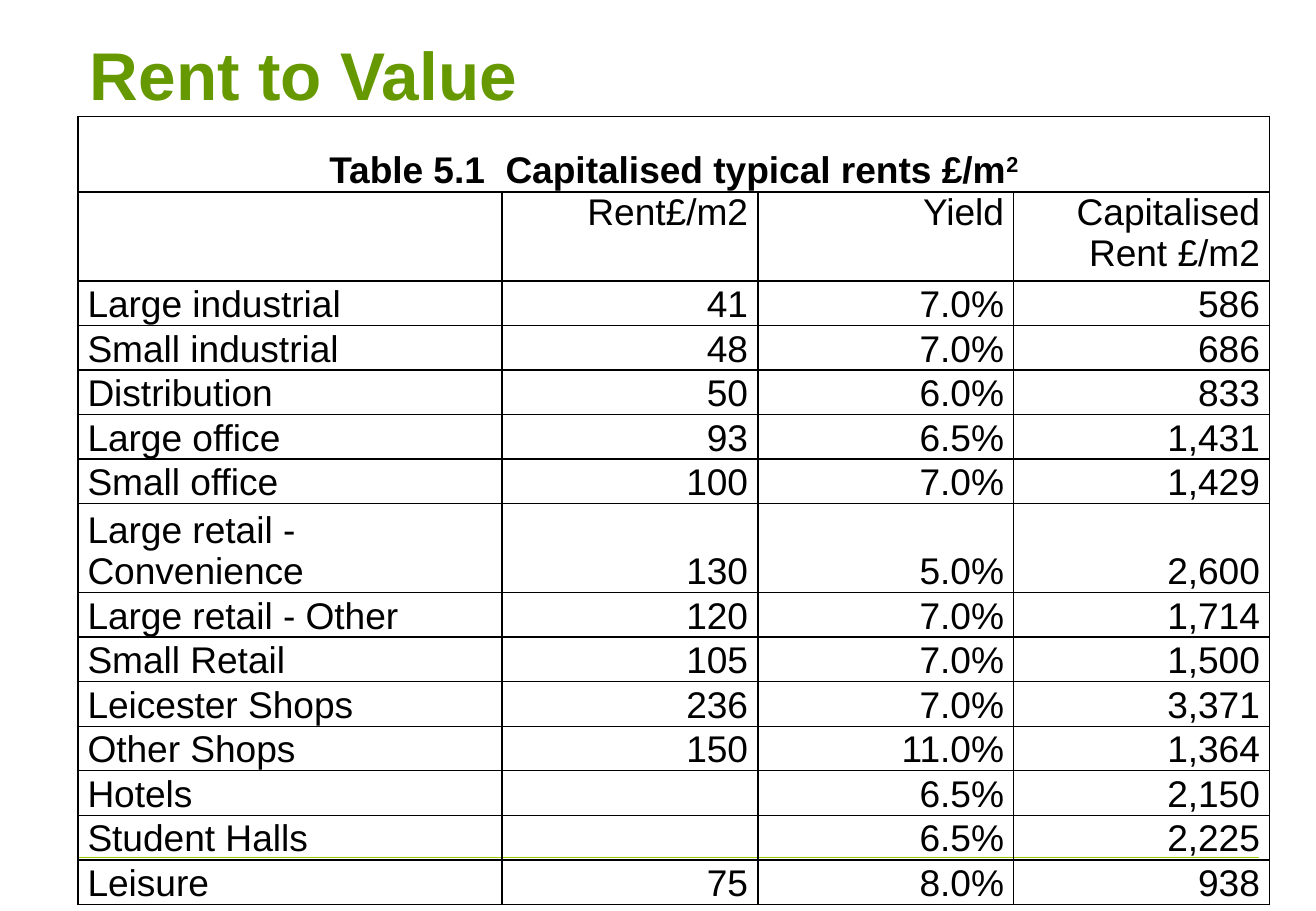
import pptx
import pptx.dml.color
import pptx.enum.shapes
import pptx.enum.text
import pptx.oxml
import pptx.oxml.ns
import pptx.util

Inches = pptx.util.Inches
Align = pptx.enum.text.PP_ALIGN
Anchor = pptx.enum.text.MSO_ANCHOR

COLOURS = {"title": "669900", "rule": "99CC00", "text": "000000", "border": "000000"}

CAPTION = "Table 5.1  Capitalised typical rents £/m"
HEADINGS = ("", "Rent£/m2", "Yield", "Capitalised Rent £/m2")
RENTS = [
    ("Large industrial", "41", "7.0%", "586"),
    ("Small industrial", "48", "7.0%", "686"),
    ("Distribution", "50", "6.0%", "833"),
    ("Large office", "93", "6.5%", "1,431"),
    ("Small office", "100", "7.0%", "1,429"),
    ("Large retail - Convenience", "130", "5.0%", "2,600"),
    ("Large retail - Other", "120", "7.0%", "1,714"),
    ("Small Retail", "105", "7.0%", "1,500"),
    ("Leicester Shops", "236", "7.0%", "3,371"),
    ("Other Shops", "150", "11.0%", "1,364"),
    ("Hotels", "", "6.5%", "2,150"),
    ("Student Halls", "", "6.5%", "2,225"),
    ("Leisure", "75", "8.0%", "938"),
]
TWO_LINE_LABELS = ("", "Large retail - Convenience")

LEFT = 0.64
TABLE_TOP, TABLE_WIDTH, TABLE_HEIGHT = 0.96, 9.81, 6.49
LABEL_WIDTH, CAPTION_HEIGHT = 3.49, 0.62


def rgb(name):
    return pptx.dml.color.RGBColor.from_string(COLOURS[name])


def add_text(paragraph, text, *, size=22, bold=False, colour="text",
             font="Arial", align=Align.LEFT, baseline=0):
    """Append a run; baseline is a raise in percent of the text size."""
    paragraph.alignment = align
    run = paragraph.add_run()
    run.text = text
    run.font.name = font
    run.font.size = pptx.util.Pt(size)
    run.font.bold = bold
    run.font.color.rgb = rgb(colour)
    if baseline:
        run._r.get_or_add_rPr().set("baseline", str(baseline * 1000))


class RentSlide:
    def __init__(self, presentation):
        self.slide = presentation.slides.add_slide(presentation.slide_layouts[5])

    def title(self, text, left, top, width, height):
        title = self.slide.shapes.title
        title.left, title.top = Inches(left), Inches(top)
        title.width, title.height = Inches(width), Inches(height)
        title.text_frame.vertical_anchor = Anchor.MIDDLE
        add_text(title.text_frame.paragraphs[0], text,
                 size=40, bold=True, colour="title")

    def rule(self, start, end, y):
        rule = self.slide.shapes.add_connector(
            pptx.enum.shapes.MSO_CONNECTOR.STRAIGHT,
            Inches(start), Inches(y), Inches(end), Inches(y))
        rule.line.color.rgb = rgb("rule")
        rule.line.width = pptx.util.Pt(0.75)
        rule._element.spPr.append(pptx.oxml.parse_xml(
            f'<a:effectLst {pptx.oxml.ns.nsdecls("a")}/>'))

    def cell_style(self, cell, anchor):
        cell.margin_left = cell.margin_right = Inches(0.08)
        cell.margin_top = cell.margin_bottom = 0
        cell.vertical_anchor = anchor
        cell.fill.background()
        properties = cell._tc.get_or_add_tcPr()
        for position, side in enumerate("LRTB"):
            properties.insert(position, pptx.oxml.parse_xml(
                f'<a:ln{side} {pptx.oxml.ns.nsdecls("a")} w="12700"><a:solidFill>'
                f'<a:srgbClr val="{COLOURS["border"]}"/></a:solidFill></a:ln{side}>'))

    def rent_table(self, headings, rents):
        rows = [headings, *rents]
        table = self.slide.shapes.add_table(
            len(rows) + 1, len(headings), Inches(LEFT), Inches(TABLE_TOP),
            Inches(TABLE_WIDTH), Inches(TABLE_HEIGHT)).table
        table.first_row = table.horz_banding = False

        figure_width = (TABLE_WIDTH - LABEL_WIDTH) / (len(headings) - 1)
        for index, column in enumerate(table.columns):
            column.width = Inches(figure_width if index else LABEL_WIDTH)

        line_counts = [2 if row[0] in TWO_LINE_LABELS else 1 for row in rows]
        line_height = (TABLE_HEIGHT - CAPTION_HEIGHT) / sum(line_counts)
        table.rows[0].height = Inches(CAPTION_HEIGHT)
        for index, lines in enumerate(line_counts, 1):
            table.rows[index].height = Inches(lines * line_height)

        for cell in table.iter_cells():
            self.cell_style(cell, Anchor.BOTTOM)
        caption = table.cell(0, 0)
        caption.merge(table.cell(0, len(headings) - 1))
        for text, baseline in ((CAPTION, 0), ("2", 30)):
            add_text(caption.text_frame.paragraphs[0], text, bold=True,
                     align=Align.CENTER, baseline=baseline)

        for row_index, row in enumerate(rows, 1):
            for column_index, text in enumerate(row):
                cell = table.cell(row_index, column_index)
                if row is headings:
                    cell.vertical_anchor = Anchor.TOP
                if text:
                    add_text(cell.text_frame.paragraphs[0], text,
                             align=Align.RIGHT if column_index else Align.LEFT)


def main():
    presentation = pptx.Presentation()
    presentation.slide_width = Inches(10.83)
    presentation.slide_height = Inches(7.5)
    slide = RentSlide(presentation)
    slide.rule(LEFT, 10.36, 7.06)
    slide.title("Rent to Value", LEFT, -0.02, 9.75, 1.25)
    slide.rent_table(HEADINGS, RENTS)
    presentation.save("out.pptx")


if __name__ == "__main__":
    main()
